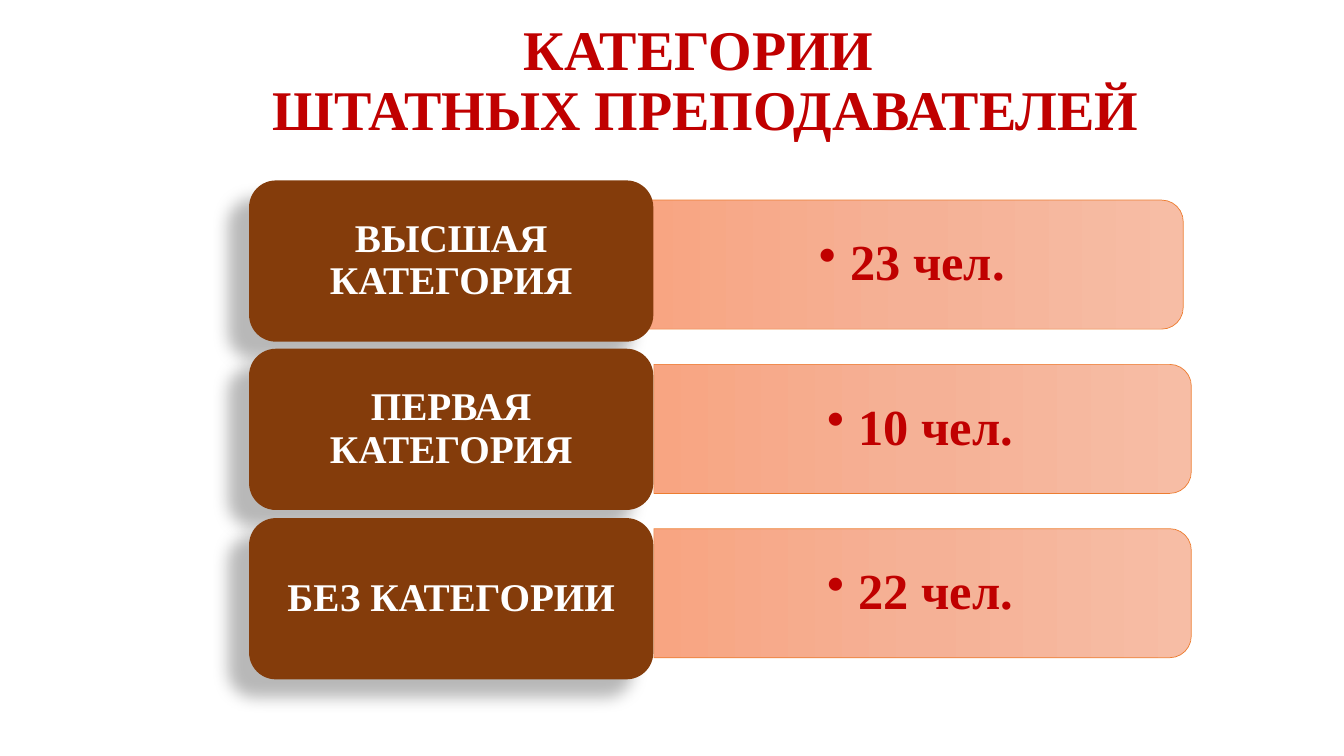
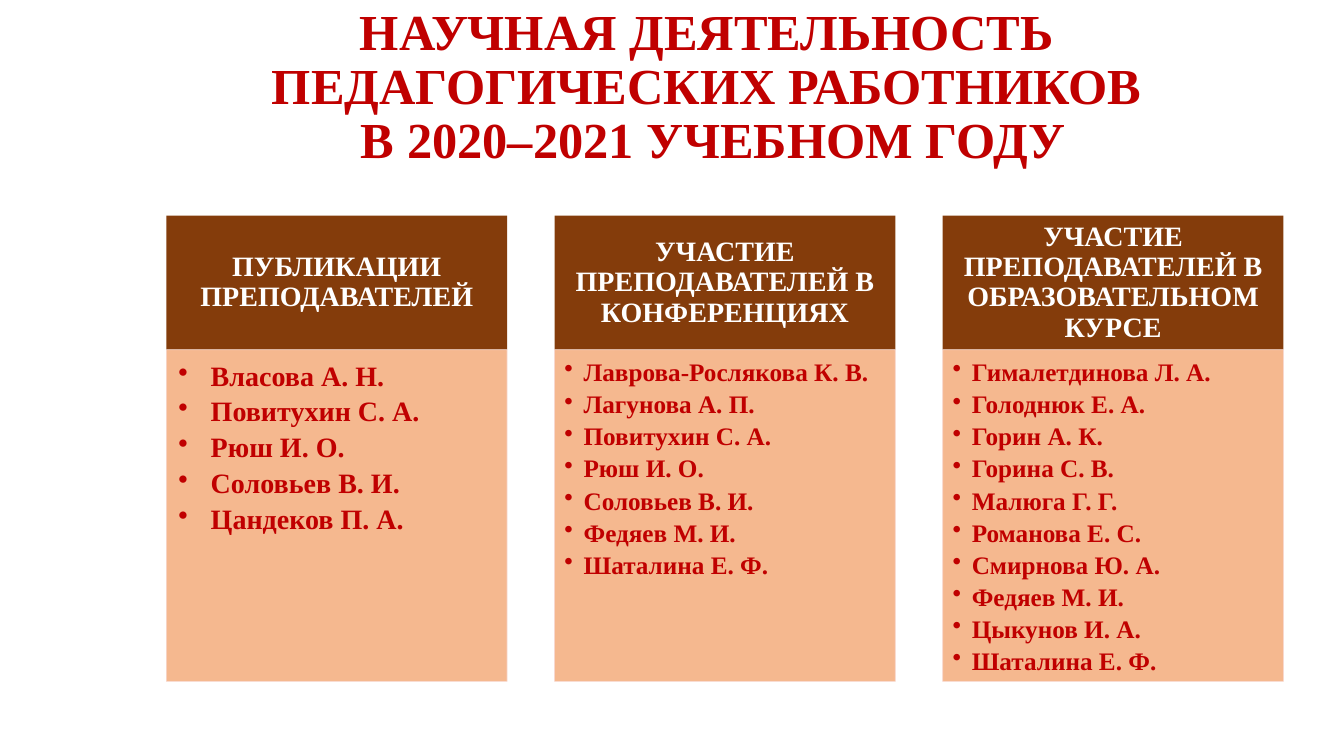
from copy import deepcopy
from dataclasses import dataclass
from typing import Sequence

from lxml.etree import SubElement
from pptx import Presentation
from pptx.dml.color import RGBColor
from pptx.enum.shapes import MSO_SHAPE
from pptx.enum.text import MSO_ANCHOR, PP_ALIGN
from pptx.oxml.ns import qn
from pptx.shapes.autoshape import Shape
from pptx.slide import Slide
from pptx.text.text import TextFrame, _Paragraph
from pptx.util import Emu, Pt

EMU_PER_PX = 9144
FONT = "Times New Roman"
COLORS = {
    "accent": "C00000",
    "brown": "843C0B",
    "white": "FFFFFF",
    "peach": "F4B183",
    "peach_edge": "F8D7CE",
    "orange": "ED7D31",
    "shadow": "000000",
    "panel_light": "F7BDA5",
    "panel_mid": "F5B196",
    "panel_deep": "F8A582",
}
PANEL_STOPS = ((0, "panel_light"), (0.5, "panel_mid"), (1, "panel_deep"))


@dataclass(frozen=True)
class Box:
    left: int
    top: int
    width: int
    height: int


@dataclass(frozen=True)
class TextStyle:
    size: int
    color: str = "accent"
    align: PP_ALIGN = PP_ALIGN.CENTER
    anchor: MSO_ANCHOR = MSO_ANCHOR.MIDDLE
    insets: tuple[int, int, int, int] = (10, 5, 10, 5)
    hang: int = 0
    space_after: float = 0


@dataclass(frozen=True)
class Category:
    label: str
    count: str
    panel_left: int


@dataclass(frozen=True)
class Activity:
    heading: str
    teachers: tuple[str, ...]
    style: TextStyle


LABEL = TextStyle(28, "white", insets=(12, 6, 12, 6))
COUNT = TextStyle(36, insets=(27, 14, 27, 14), hang=31)
HEADING = TextStyle(20, "white", insets=(16, 9, 16, 9))
LARGE_LIST = TextStyle(20, align=PP_ALIGN.LEFT, anchor=MSO_ANCHOR.TOP,
                       insets=(12, 12, 16, 17), hang=32, space_after=4)
SMALL_LIST = TextStyle(18, align=PP_ALIGN.LEFT, anchor=MSO_ANCHOR.TOP,
                       insets=(10, 10, 14, 16), hang=19, space_after=3.5)

CATEGORIES = (
    Category("ВЫСШАЯ КАТЕГОРИЯ", "23 чел.", 843),
    Category("ПЕРВАЯ КАТЕГОРИЯ", "10 чел.", 851),
    Category("БЕЗ КАТЕГОРИИ", "22 чел.", 851),
)
ACTIVITIES = (
    Activity("ПУБЛИКАЦИИ ПРЕПОДАВАТЕЛЕЙ", (
        "Власова А. Н.", "Повитухин С. А.", "Рюш И. О.", "Соловьев В. И.",
        "Цандеков П. А.",
    ), LARGE_LIST),
    Activity("УЧАСТИЕ ПРЕПОДАВАТЕЛЕЙ В КОНФЕРЕНЦИЯХ", (
        "Лаврова-Рослякова К. В.", "Лагунова А. П.", "Повитухин С. А.",
        "Рюш И. О.", "Соловьев В. И.", "Федяев М. И.", "Шаталина Е. Ф.",
    ), SMALL_LIST),
    Activity("УЧАСТИЕ ПРЕПОДАВАТЕЛЕЙ В ОБРАЗОВАТЕЛЬНОМ КУРСЕ", (
        "Гималетдинова Л. А.", "Голоднюк Е. А.", "Горин А. К.", "Горина С. В.",
        "Малюга Г. Г.", "Романова Е. С.", "Смирнова Ю. А.", "Федяев М. И.",
        "Цыкунов И. А.", "Шаталина Е. Ф.",
    ), SMALL_LIST),
)


def px(length: int) -> Emu:
    return Emu(length * EMU_PER_PX)


def color(name: str) -> RGBColor:
    return RGBColor.from_string(COLORS[name])


def place(box: Box) -> tuple[Emu, Emu, Emu, Emu]:
    return px(box.left), px(box.top), px(box.width), px(box.height)


def add_bullet(paragraph: _Paragraph, hang: int) -> None:
    properties = paragraph._p.get_or_add_pPr()
    properties.set("marL", str(px(hang)))
    properties.set("indent", str(-px(hang)))
    SubElement(properties, qn("a:buChar")).set("char", "•")


def write(frame: TextFrame, lines: Sequence[str], style: TextStyle) -> None:
    frame.word_wrap = True
    frame.vertical_anchor = style.anchor
    (frame.margin_left, frame.margin_top,
     frame.margin_right, frame.margin_bottom) = map(px, style.insets)
    frame.text = "\n".join(lines)
    for paragraph in frame.paragraphs:
        if style.hang:
            add_bullet(paragraph, style.hang)
        paragraph.alignment = style.align
        paragraph.line_spacing = 0.9
        paragraph.space_after = Pt(style.space_after)
        for run in paragraph.runs:
            run.font.name = FONT
            run.font.size = Pt(style.size)
            run.font.bold = True
            run.font.color.rgb = color(style.color)


def add_text(slide: Slide, box: Box, text: str, style: TextStyle) -> None:
    write(slide.shapes.add_textbox(*place(box)).text_frame, [text], style)


def add_block(slide: Slide, kind: MSO_SHAPE, box: Box, fill: str) -> Shape:
    block = slide.shapes.add_shape(kind, *place(box))
    block.shadow.inherit = False
    block.fill.solid()
    block.fill.fore_color.rgb = color(fill)
    block.line.fill.background()
    return block


def set_edge(block: Shape, edge: str) -> None:
    block.line.color.rgb = color(edge)
    block.line.width = Pt(0.5)


def set_gradient(block: Shape) -> None:
    block.fill.gradient()
    stops = block._element.spPr.find(".//" + qn("a:gsLst"))
    stops.insert(1, deepcopy(stops[0]))
    for stop, (position, name) in zip(block.fill.gradient_stops, PANEL_STOPS):
        stop.position = position
        stop.color.rgb = color(name)
    block.fill.gradient_angle = 270


def set_opacity(block: Shape, percent: int) -> None:
    for tone in block._element.spPr.iter(qn("a:srgbClr")):
        SubElement(tone, qn("a:alpha")).set("val", str(percent * 1000))


def cast_shadow(block: Shape) -> None:
    effects = block._element.spPr.find(qn("a:effectLst"))
    shadow = SubElement(effects, qn("a:outerShdw"), blurRad=str(Pt(11.8)),
                        dist=str(Pt(19.7)), dir=str(141 * 60000),
                        algn="ctr", rotWithShape="0")
    tone = SubElement(shadow, qn("a:srgbClr"), val=COLORS["shadow"])
    SubElement(tone, qn("a:alpha")).set("val", "28000")


def add_category(slide: Slide, index: int, category: Category) -> None:
    thickness, length = 128, 533
    panel_top = -4 + 163 * index
    panel = add_block(slide, MSO_SHAPE.ROUND_2_SAME_RECTANGLE,
                      Box(category.panel_left, panel_top, thickness, length),
                      "panel_mid")
    panel.rotation = 90
    set_gradient(panel)
    set_edge(panel, "orange")
    count_left = category.panel_left - (length - thickness) // 2
    add_text(slide, Box(count_left, 205 + 163 * index, 527, 115),
             category.count, COUNT)
    label = add_block(slide, MSO_SHAPE.ROUNDED_RECTANGLE,
                      Box(247, 179 + 335 * index // 2, 401, 160), "brown")
    cast_shadow(label)
    write(label.text_frame, [category.label], LABEL)


def add_activity(slide: Slide, index: int, activity: Activity) -> None:
    left, top, width, heading_height = 165 + 385 * index, 214, 338, 133
    heading = add_block(slide, MSO_SHAPE.RECTANGLE,
                        Box(left, top, width, heading_height), "brown")
    write(heading.text_frame, [activity.heading], HEADING)
    roster = add_block(slide, MSO_SHAPE.RECTANGLE,
                       Box(left, top + heading_height, width, 329), "peach")
    set_edge(roster, "peach_edge")
    set_opacity(roster, 90)
    write(roster.text_frame, activity.teachers, activity.style)


def main() -> None:
    deck = Presentation()
    deck.slide_width, deck.slide_height = px(1333), px(750)
    blank = deck.slide_layouts[6]

    categories = deck.slides.add_slide(blank)
    add_text(categories, Box(100, 19, 1200, 125),
             "КАТЕГОРИИ \vШТАТНЫХ ПРЕПОДАВАТЕЛЕЙ", TextStyle(40))
    for index, category in enumerate(CATEGORIES):
        add_category(categories, index, category)

    research = deck.slides.add_slide(blank)
    add_text(research, Box(45, 25, 1325, 125),
             "НАУЧНАЯ ДЕЯТЕЛЬНОСТЬ \vПЕДАГОГИЧЕСКИХ РАБОТНИКОВ "
             "\vВ 2020–2021 УЧЕБНОМ ГОДУ", TextStyle(36))
    for index, activity in enumerate(ACTIVITIES):
        add_activity(research, index, activity)

    deck.save("out.pptx")


if __name__ == "__main__":
    main()
